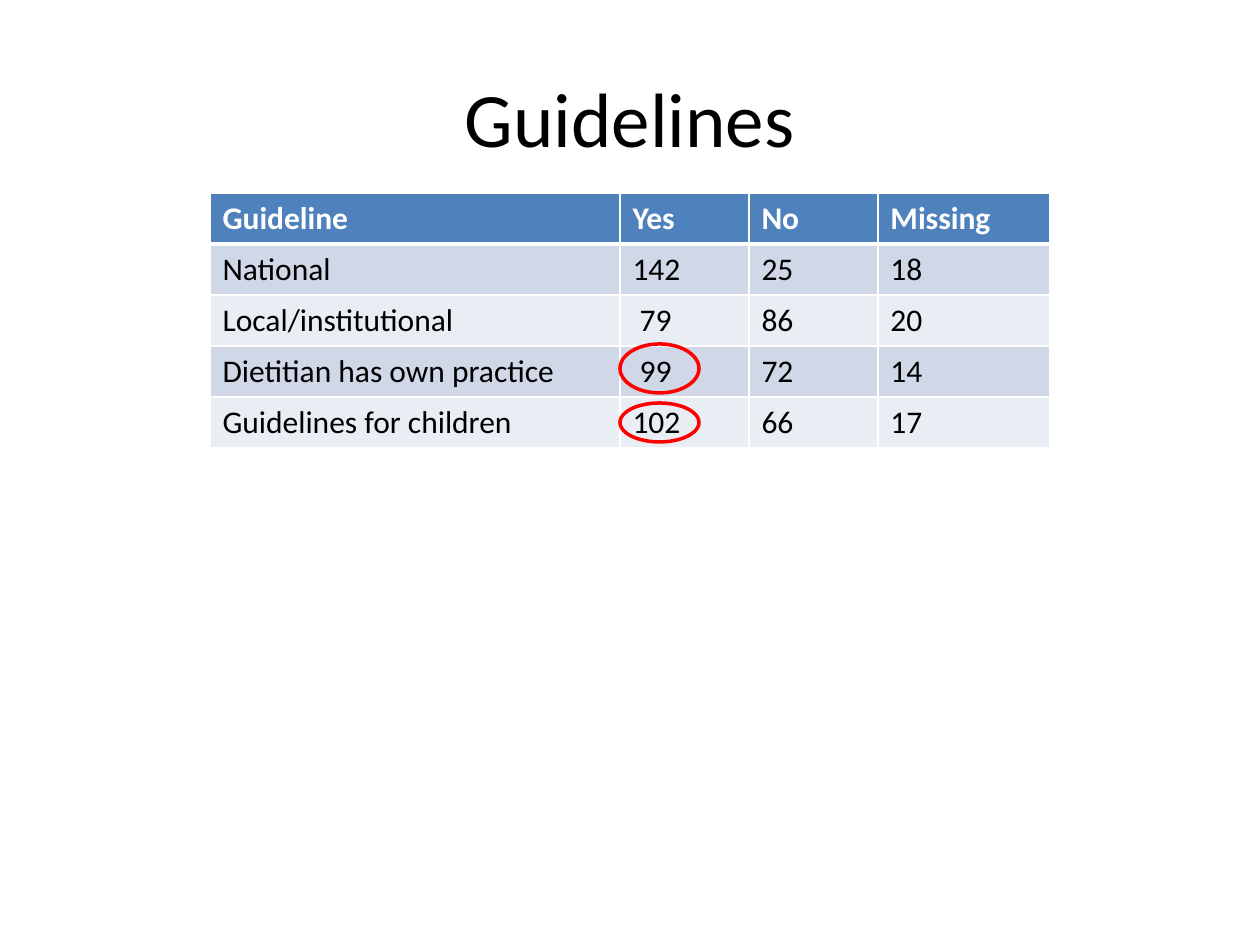
from lxml import etree
from pptx import Presentation
from pptx import util as u
from pptx.dml.color import RGBColor
from pptx.enum import shapes, text
from pptx.oxml.ns import qn

PX = 914400 // 126
FONT = "Calibri"
COLORS = {
    "white": "FFFFFF",
    "black": "000000",
    "header": "4F81BD",
    "odd_row": "D0D8E8",
    "even_row": "E9EDF4",
    "ring": "FF0000",
}
ROWS = [
    ("Guideline", "Yes", "No", "Missing"),
    ("National", "142", "25", "18"),
    ("Local/institutional", " 79", "86", "20"),
    ("Dietitian has own practice", " 99", "72", "14"),
    ("Guidelines for children", "102", "66", "17"),
]
COLUMN_WIDTHS = (410, 129, 129, 172)
ROW_HEIGHT = 51


def px(*lengths):
    return [u.Emu(length * PX) for length in lengths]


def color(name):
    return RGBColor.from_string(COLORS[name])


def style_font(paragraph, size, color_name, bold=False):
    font = paragraph.font
    font.name, font.size, font.bold = FONT, u.Pt(size), bold
    font.color.rgb = color(color_name)


def add_title(slide, words, *box):
    frame = slide.shapes.add_textbox(*px(*box)).text_frame
    frame.word_wrap = True
    frame.vertical_anchor = text.MSO_ANCHOR.MIDDLE
    paragraph = frame.paragraphs[0]
    paragraph.text = words
    paragraph.alignment = text.PP_ALIGN.CENTER
    style_font(paragraph, 44, "black")


def set_borders(cell, widths):
    properties = cell._tc.get_or_add_tcPr()
    for index, (side, width) in enumerate(widths.items()):
        line = etree.Element(qn(f"a:ln{side}"), w=str(u.Pt(width)))
        fill = etree.SubElement(line, qn("a:solidFill"))
        etree.SubElement(fill, qn("a:srgbClr"), val=COLORS["white"])
        properties.insert(index, line)


def add_guideline_table(slide, left, top):
    size = sum(COLUMN_WIDTHS), ROW_HEIGHT * len(ROWS)
    table = slide.shapes.add_table(
        len(ROWS), len(COLUMN_WIDTHS), *px(left, top, *size)
    ).table
    for column, width in zip(table.columns, px(*COLUMN_WIDTHS)):
        column.width = width
    for row_index, values in enumerate(ROWS):
        header = row_index == 0
        band = "odd_row" if row_index % 2 else "even_row"
        for column_index, value in enumerate(values):
            cell = table.cell(row_index, column_index)
            cell.text = value
            cell.fill.solid()
            cell.fill.fore_color.rgb = color("header" if header else band)
            style_font(cell.text_frame.paragraphs[0], 18,
                       "white" if header else "black", header)
            set_borders(cell, {"L": 1, "R": 1,
                               "T": 3 if row_index == 1 else 1,
                               "B": 3 if header else 1})


def add_ring(slide, *box):
    ring = slide.shapes.add_shape(shapes.MSO_SHAPE.OVAL, *px(*box))
    ring.shadow.inherit = False
    ring.fill.background()
    ring.line.color.rgb = color("ring")
    ring.line.width = u.Pt(2)


def main():
    """Build the guidelines slide and save it."""
    presentation = Presentation()
    presentation.slide_width, presentation.slide_height = px(1260, 945)
    slide = presentation.slides.add_slide(presentation.slide_layouts[6])
    add_title(slide, "Guidelines", 63, 38, 1134, 157)
    add_guideline_table(slide, 210, 193)
    for top, height in ((344, 49), (403, 39)):
        add_ring(slide, 620, top, 79, height)
    presentation.save("out.pptx")


if __name__ == "__main__":
    main()
